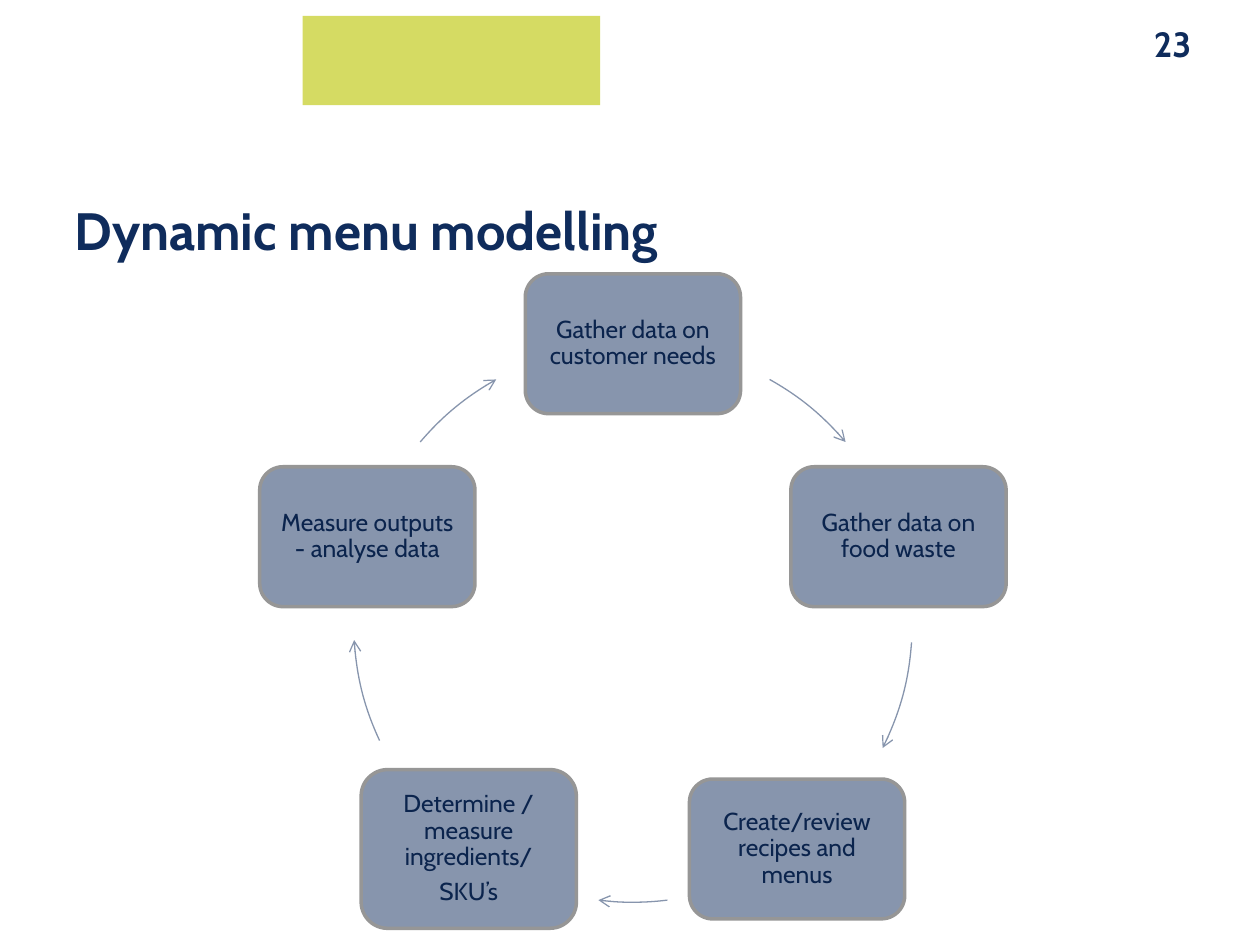
from dataclasses import dataclass
from math import cos, radians, sin

from lxml import etree
from pptx import Presentation
from pptx.dml.color import RGBColor
from pptx.enum.shapes import MSO_SHAPE
from pptx.enum.text import MSO_ANCHOR, PP_ALIGN
from pptx.oxml.ns import qn
from pptx.util import Cm, Pt

RECT = MSO_SHAPE.RECTANGLE
ROUND = MSO_SHAPE.ROUNDED_RECTANGLE
ARC = MSO_SHAPE.ARC
TOP = MSO_ANCHOR.TOP
MIDDLE = MSO_ANCHOR.MIDDLE
LEFT = PP_ALIGN.LEFT
CENTER = PP_ALIGN.CENTER


@dataclass
class Theme:
    font: str = "Cabin"
    paper: str = "FFFFFF"
    navy: str = "0F2C5C"
    ink: str = "0B244D"
    lime: str = "D5DB63"
    slate: str = "8795AD"
    gray: str = "969696"
    title: int = 30
    number: int = 20
    body: int = 14


theme = Theme()


def write(shape, text, size, color, bold=False, align=LEFT, anchor=TOP,
          inset=(0, 0), lead=None, after=0):
    frame = shape.text_frame
    frame.word_wrap = True
    frame.vertical_anchor = anchor
    frame.margin_left = frame.margin_right = Cm(inset[0])
    frame.margin_top = frame.margin_bottom = Cm(inset[1])
    frame.text = text
    for para in frame.paragraphs:
        para.alignment = align
        para.line_spacing = lead
        para.space_after = Pt(after)
        para.font.name = theme.font
        para.font.size = Pt(size)
        para.font.bold = bold
        para.font.color.rgb = RGBColor.from_string(color)


deck = Presentation()
deck.slide_width, deck.slide_height = Cm(25.4), Cm(19.05)
slide = deck.slides.add_slide(deck.slide_layouts[6])
slide.background.fill.solid()
slide.background.fill.fore_color.rgb = RGBColor.from_string(theme.paper)
shapes = slide.shapes

number = shapes.add_textbox(Cm(23.01), Cm(0.33), Cm(2.39), Cm(1.12))
write(number, "23", theme.number, theme.navy, bold=True, inset=(0.25, 0.13))

band = shapes.add_shape(RECT, Cm(6.1), Cm(0.32), Cm(6), Cm(1.8))
band.shadow.inherit = False
band.fill.solid()
band.fill.fore_color.rgb = RGBColor.from_string(theme.lime)
band.line.fill.background()

title = shapes.add_textbox(Cm(1.5), Cm(3.99), Cm(23.11), Cm(1.47))
write(title, "Dynamic menu modelling", theme.title, theme.navy, bold=True)

mid_x, mid_y, radius = 12.76, 12.56, 5.63
steps = [
    ("Gather data on customer needs", 2.82, 299.3, 319.6),
    ("Gather data on food waste", 2.82, 4, 26.6),
    ("Create/review recipes and menus", 2.82, 82.9, 97.1),
    ("Determine / measure ingredients/\nSKU’s", 3.2, 155.1, 176.5),
    ("Measure outputs - analyse data", 2.82, 220.4, 240.7),
]
wide = 4.34

for i, (text, high, start, end) in enumerate(steps):
    turn = radians(360 / len(steps) * i - 90)
    left = mid_x + radius * cos(turn) - wide / 2
    top = mid_y + radius * sin(turn) - high / 2
    node = shapes.add_shape(ROUND, Cm(left), Cm(top), Cm(wide), Cm(high))
    node.shadow.inherit = False
    node.fill.solid()
    node.fill.fore_color.rgb = RGBColor.from_string(theme.slate)
    node.line.color.rgb = RGBColor.from_string(theme.gray)
    node.line.width = Pt(2)
    write(node, text, theme.body, theme.ink, align=CENTER, anchor=MIDDLE,
          inset=(0.15, 0.15), lead=0.9, after=5)

    arrow = shapes.add_shape(ARC, Cm(mid_x - radius), Cm(mid_y - radius),
                             Cm(2 * radius), Cm(2 * radius))
    arrow.shadow.inherit = False
    arrow.adjustments[0] = start * 0.6
    arrow.adjustments[1] = end * 0.6
    arrow.fill.background()
    arrow.line.color.rgb = RGBColor.from_string(theme.slate)
    arrow.line.width = Pt(0.75)
    line = arrow.line._get_or_add_ln()
    etree.SubElement(line, qn("a:tailEnd"), type="arrow")

deck.save("out.pptx")
